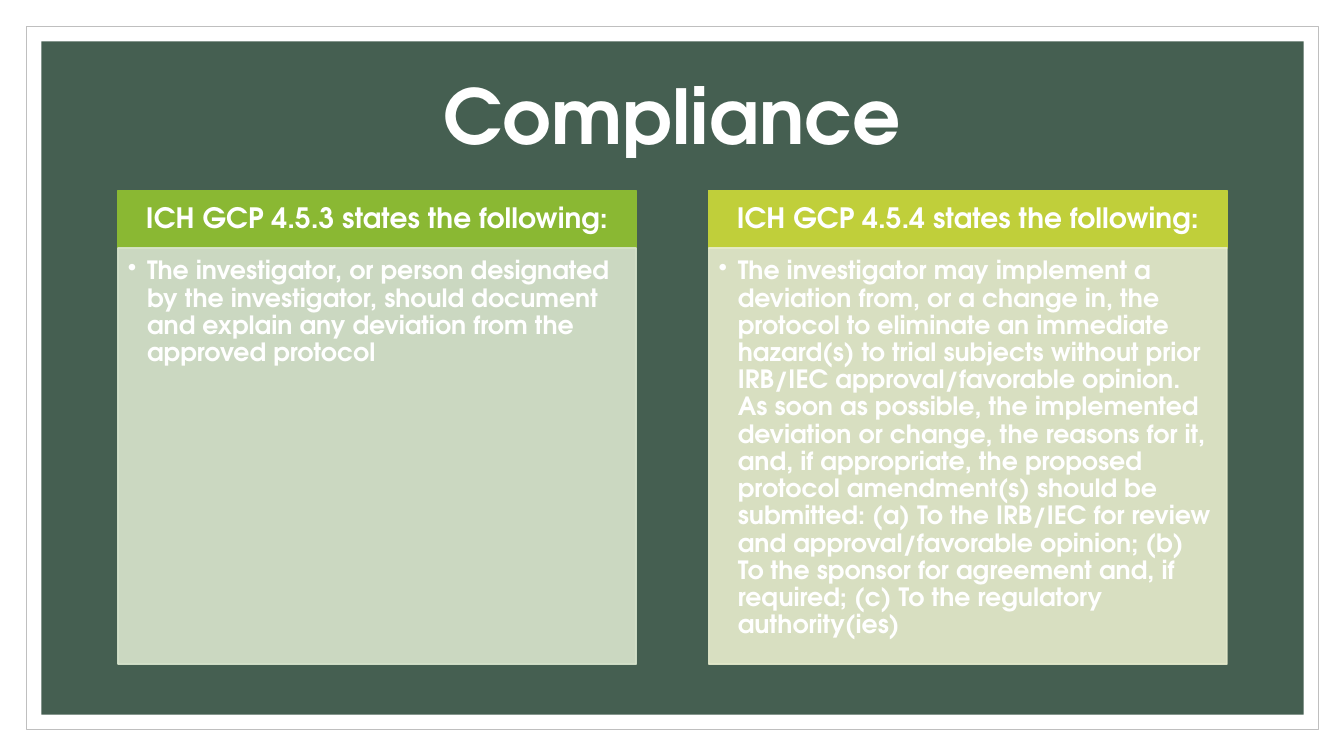
from lxml import etree
from pptx import Presentation
from pptx.dml.color import RGBColor
from pptx.enum.shapes import MSO_SHAPE
from pptx.enum.text import MSO_ANCHOR, PP_ALIGN
from pptx.oxml.ns import qn
from pptx.util import Inches, Pt

WHITE = RGBColor(0xFF, 0xFF, 0xFF)
FRAME_GRAY = RGBColor(0xBF, 0xBF, 0xBF)
DARK_GREEN = RGBColor(0x45, 0x5F, 0x51)
GREEN = RGBColor(0x8A, 0xB8, 0x33)
PALE_GREEN = RGBColor(0xDA, 0xE6, 0xCE)
LIME = RGBColor(0xC0, 0xCF, 0x3A)
PALE_LIME = RGBColor(0xE8, 0xED, 0xCE)

COLUMNS = [
    (
        "ICH GCP 4.5.3 states the following:",
        "The investigator, or person designated by the investigator, should document "
        "and explain any deviation from the approved protocol",
        GREEN,
        PALE_GREEN,
    ),
    (
        "ICH GCP 4.5.4 states the following:",
        "The investigator may implement a deviation from, or a change in, the protocol "
        "to eliminate an immediate hazard(s) to trial subjects without prior IRB/IEC "
        "approval/favorable opinion. As soon as possible, the implemented deviation or "
        "change, the reasons for it, and, if appropriate, the proposed protocol "
        "amendment(s) should be submitted: (a) To the IRB/IEC for review and "
        "approval/favorable opinion; (b) To the sponsor for agreement and, if required; "
        "(c) To the regulatory authority(ies)",
        LIME,
        PALE_LIME,
    ),
]
COLUMN_LEFT, COLUMN_STEP, COLUMN_WIDTH = 1.17, 5.86, 5.14
HEADER_TOP, HEADER_HEIGHT, BODY_HEIGHT = 1.89, 0.57, 4.13


class ComplianceSlide:
    font_name = "TeX Gyre Adventor"
    text_color = WHITE
    line_spacing = 0.9

    def __init__(self, deck):
        self.page = deck.slides.add_slide(deck.slide_layouts[6])

    def panel(self, left, top, width, height, fill, line=None, line_width=1, opacity=100):
        box = self.page.shapes.add_shape(
            MSO_SHAPE.RECTANGLE, Inches(left), Inches(top), Inches(width), Inches(height)
        )
        box.shadow.inherit = False
        box.fill.solid()
        box.fill.fore_color.rgb = fill
        if line is None:
            box.line.fill.background()
        else:
            box.line.color.rgb = line
            box.line.width = Pt(line_width)
        if opacity < 100:
            for color in box.element.spPr.iter(qn("a:srgbClr")):
                etree.SubElement(color, qn("a:alpha"), val=str(opacity * 1000))
        return box

    def set_text(self, box, text, size, anchor, align, margins):
        frame = box.text_frame
        frame.word_wrap = True
        frame.vertical_anchor = anchor
        frame.margin_left, frame.margin_top, frame.margin_right, frame.margin_bottom = map(
            Inches, margins
        )
        frame.text = text
        para = frame.paragraphs[0]
        para.alignment = align
        para.line_spacing = self.line_spacing
        span = para.runs[0]
        span.font.name = self.font_name
        span.font.size = Pt(size)
        span.font.bold = True
        span.font.color.rgb = self.text_color
        return para

    def title(self, text, left, top, width, height):
        box = self.page.shapes.add_textbox(
            Inches(left), Inches(top), Inches(width), Inches(height)
        )
        self.set_text(box, text, 54, MSO_ANCHOR.MIDDLE, PP_ALIGN.CENTER, (0.1, 0.05, 0.1, 0.05))

    def header(self, text, left, color):
        box = self.panel(left, HEADER_TOP, COLUMN_WIDTH, HEADER_HEIGHT, color, color)
        self.set_text(box, text, 20, MSO_ANCHOR.MIDDLE, PP_ALIGN.CENTER, (0.16, 0.09, 0.16, 0.09))

    def body(self, text, left, color):
        top = HEADER_TOP + HEADER_HEIGHT
        box = self.panel(left, top, COLUMN_WIDTH, BODY_HEIGHT, color, color, opacity=90)
        para = self.set_text(box, text, 18, MSO_ANCHOR.TOP, PP_ALIGN.LEFT, (0.1, 0.1, 0.14, 0.16))
        self.bullet(para)

    def bullet(self, para):
        properties = para._p.get_or_add_pPr()
        properties.set("marL", str(Inches(0.19)))
        properties.set("indent", str(-Inches(0.19)))
        etree.SubElement(properties, qn("a:buChar"), char="•")


def main():
    deck = Presentation()
    deck.slide_width = Inches(13.33)
    deck.slide_height = Inches(7.5)
    slide = ComplianceSlide(deck)
    slide.panel(0.26, 0.26, 12.82, 6.98, WHITE, FRAME_GRAY, 0.5)
    slide.panel(0.41, 0.41, 12.52, 6.68, DARK_GREEN)
    slide.title("Compliance", 1.17, 0.7, 11, 0.98)
    for index, (heading, statement, color, pale_color) in enumerate(COLUMNS):
        left = COLUMN_LEFT + index * COLUMN_STEP
        slide.header(heading, left, color)
        slide.body(statement, left, pale_color)
    deck.save("out.pptx")


if __name__ == "__main__":
    main()
